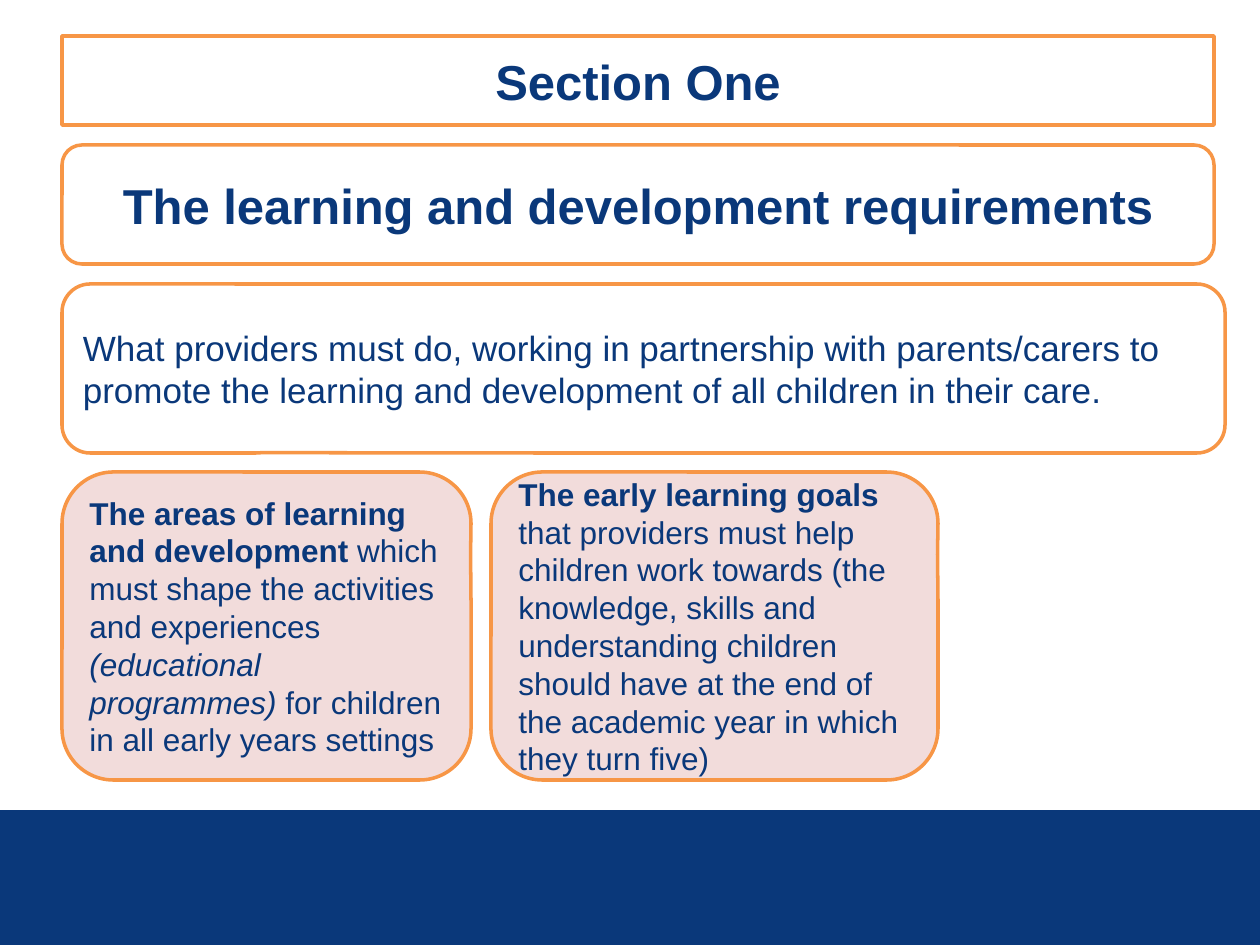
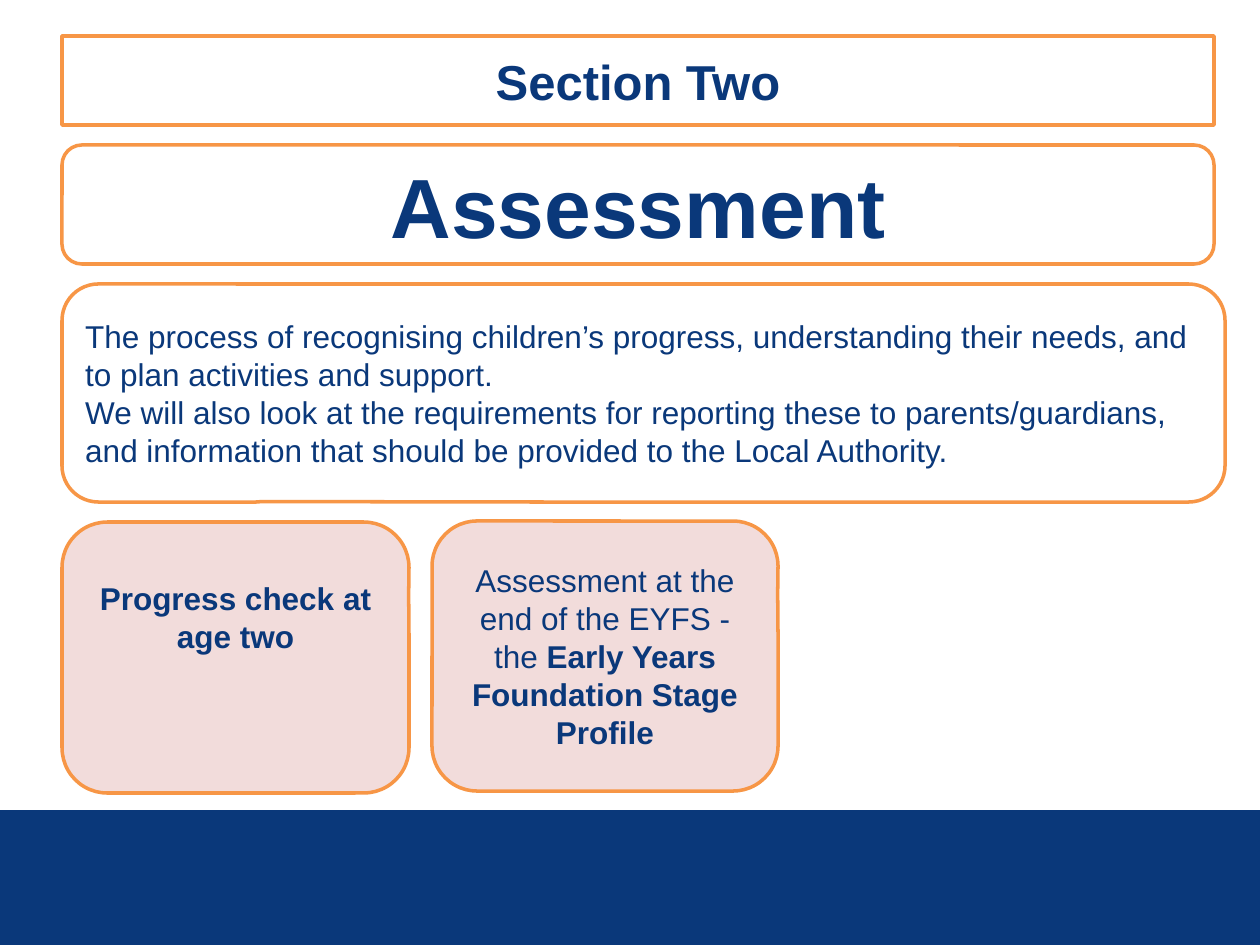
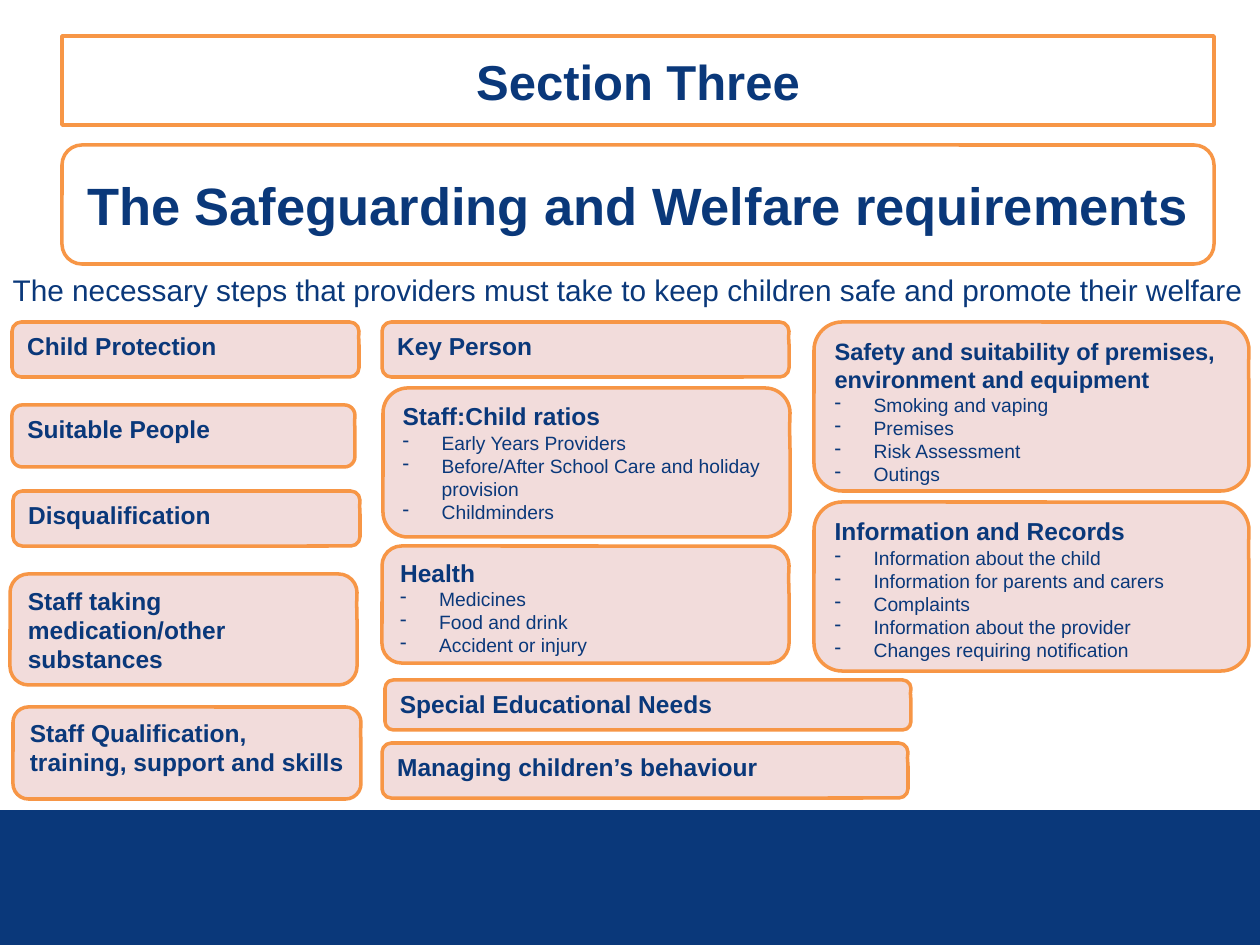
from dataclasses import dataclass

from lxml import etree
from pptx import Presentation
from pptx import util as u
from pptx.dml.color import RGBColor
from pptx.enum import shapes, text
from pptx.oxml import ns

PX = 914400 / 126
SLIDE_W, SLIDE_H = 1260, 945
LEFT, BANNER_W = 62, 1152
SUMMARY_TOP, SUMMARY_W = 284, 1163
CENTER, START = text.PP_ALIGN.CENTER, text.PP_ALIGN.LEFT
MIDDLE, TOP = text.MSO_ANCHOR.MIDDLE, text.MSO_ANCHOR.TOP
CALLOUT = shapes.MSO_SHAPE.ROUNDED_RECTANGULAR_CALLOUT
SIDE_TIP = (0.499, -0.232, 0.167)
BASE_TIP = (-0.328, 0.498, 0.167)


@dataclass(frozen=True)
class Theme:
    font: str = "Arial"
    navy: RGBColor = RGBColor(0x0A, 0x38, 0x7A)
    orange: RGBColor = RGBColor(0xF7, 0x96, 0x46)
    pink: RGBColor = RGBColor(0xF2, 0xDC, 0xDB)
    white: RGBColor = RGBColor(0xFF, 0xFF, 0xFF)
    line: float = 2
    title: float = 28
    summary: float = 20
    body: float = 18
    lead: float = 17
    topic: float = 14
    item: float = 11


THEME = Theme()


def px(n):
    return u.Emu(round(n * PX))


def place(sp, box):
    sp.left, sp.top, sp.width, sp.height = map(px, box)


def paint(sp, fill):
    sp.fill.solid()
    sp.fill.fore_color.rgb = fill
    sp.line.color.rgb = THEME.orange
    sp.line.width = u.Pt(THEME.line)


def set_geometry(sp, preset, adjustments=()):
    """Give a placed placeholder a preset outline."""
    geom = etree.Element(ns.qn("a:prstGeom"), prst=preset)
    guides = etree.SubElement(geom, ns.qn("a:avLst"))
    for i, value in enumerate(adjustments, 1):
        etree.SubElement(guides, ns.qn("a:gd"), name=f"adj{i}",
                         fmla=f"val {round(value * 100000)}")
    sp.element.spPr.insert(1, geom)


def set_bullet(p, mark):
    pPr = p._p.get_or_add_pPr()
    indent = px(39) if mark else 0
    pPr.set("marL", str(indent))
    pPr.set("indent", str(-indent))
    if mark:
        etree.SubElement(pPr, ns.qn("a:buChar"), char=mark)
    else:
        etree.SubElement(pPr, ns.qn("a:buNone"))


def add_paragraph(tf, runs, size, align=START, mark=None):
    """Fill the empty first paragraph or add one; runs are (text, style) with style b or i."""
    p = tf.paragraphs[0] if not tf.text else tf.add_paragraph()
    p.alignment = align
    p.space_before = u.Pt(0)
    set_bullet(p, mark)
    for words, style in runs:
        r = p.add_run()
        r.text = words
        r.font.name, r.font.size = THEME.font, u.Pt(size)
        r.font.bold, r.font.italic = style == "b", style == "i"
        r.font.color.rgb = THEME.navy


def prepare_text(sp, anchor):
    tf = sp.text_frame
    tf.word_wrap = True
    tf.auto_size = text.MSO_AUTO_SIZE.NONE
    tf.vertical_anchor = anchor
    return tf


def add_box(s, kind, box, fill):
    sp = s.shapes.add_shape(kind, *map(px, box))
    sp.shadow.inherit = False
    paint(sp, fill)
    return sp


def add_band(prs, s):
    """Draw the bottom band and move it to the slide master."""
    band = s.shapes.add_shape(shapes.MSO_SHAPE.RECTANGLE,
                              *map(px, (0, 810, SLIDE_W, SLIDE_H - 810)))
    band.shadow.inherit = False
    band.fill.solid()
    band.fill.fore_color.rgb = THEME.navy
    band.line.fill.background()
    band.element.nvSpPr.cNvPr.set("id", "100")
    prs.slide_master.shapes.element.insert(2, band.element)


def add_section(prs, section, heading, heading_size=THEME.title):
    s = prs.slides.add_slide(prs.slide_layouts[1])
    title = s.shapes.title
    place(title, (LEFT, 36, BANNER_W, 89))
    set_geometry(title, "roundRect")
    paint(title, THEME.white)
    banner = add_box(s, shapes.MSO_SHAPE.ROUNDED_RECTANGLE,
                     (LEFT, 145, BANNER_W, 119), THEME.white)
    for sp, words, size in ((title, section, THEME.title),
                            (banner, heading, heading_size)):
        add_paragraph(prepare_text(sp, MIDDLE), [(words, "b")], size, CENTER)
    return s


def add_body(s, box, paragraphs, size, anchor):
    body = s.placeholders[1]
    place(body, box)
    tf = prepare_text(body, anchor)
    for words in paragraphs:
        add_paragraph(tf, [(words, "")], size)
    return body


def add_summary(s, height, paragraphs, size):
    body = add_body(s, (LEFT, SUMMARY_TOP, SUMMARY_W, height),
                    paragraphs, size, MIDDLE)
    set_geometry(body, "wedgeRoundRectCallout", BASE_TIP)
    paint(body, THEME.white)


def add_card(s, box, runs, size=THEME.body, align=START, anchor=MIDDLE):
    card = add_box(s, CALLOUT, box, THEME.pink)
    for i, value in enumerate(SIDE_TIP):
        card.adjustments[i] = value
    tf = prepare_text(card, anchor)
    add_paragraph(tf, runs, size, align)
    return tf


def add_topic(s, box, name, items=(), size=THEME.topic):
    tf = add_card(s, box, [(name, "b")], size, anchor=TOP)
    for item in items:
        add_paragraph(tf, [(item, "")], THEME.item, mark="-")


def learning_slide(prs):
    s = add_section(prs, "Section One", "The learning and development requirements")
    add_band(prs, s)
    add_summary(s, 169, [
        "What providers must do, working in partnership with parents/carers to "
        "promote the learning and development of all children in their care."],
        THEME.summary)
    add_card(s, (LEFT, 472, 409, 308), [
        ("The areas of learning and development ", "b"),
        ("which must shape the activities and experiences ", ""),
        ("(educational programmes) ", "i"),
        ("for children in all early years settings", "")])
    add_card(s, (491, 472, 447, 308), [
        ("The early learning goals ", "b"),
        ("that providers must help children work towards (the knowledge, skills and "
         "understanding children should have at the end of the academic year in which "
         "they turn five)", "")])


def assessment_slide(prs):
    s = add_section(prs, "Section Two", "Assessment", 48)
    add_summary(s, 218, [
        "The process of recognising children’s progress, understanding their needs, "
        "and to plan activities and support.",
        "We will also look at the requirements for reporting these to "
        "parents/guardians, and information that should be provided to the Local "
        "Authority."], THEME.body)
    progress = add_card(s, (LEFT, 522, 347, 271),
                        [("Progress check at age two", "b")],
                        align=CENTER, anchor=TOP)
    progress.margin_top = px(44)
    add_card(s, (432, 521, 346, 270), [
        ("Assessment at the end of the EYFS - the ", ""),
        ("Early Years Foundation Stage Profile", "b")], align=CENTER)


def safeguarding_slide(prs):
    s = add_section(prs, "Section Three", "The Safeguarding and Welfare requirements", 30)
    add_body(s, (0, 265, SLIDE_W, 87), [
        "The necessary steps that providers must take to keep children safe and "
        "promote their welfare"], THEME.lead, TOP)

    add_topic(s, (12, 322, 347, 55), "Child Protection")
    add_topic(s, (12, 405, 343, 62), "Suitable People")
    add_topic(s, (13, 491, 347, 55), "Disqualification")
    add_topic(s, (10, 574, 347, 111), "Staff taking medication/other substances")
    add_topic(s, (13, 707, 348, 92), "Staff Qualification, training, support and skills")

    add_topic(s, (382, 322, 407, 55), "Key Person")
    add_topic(s, (383, 388, 407, 149), "Staff:Child ratios", [
        "Early Years Providers",
        "Before/After School Care and holiday provision",
        "Childminders"])
    add_topic(s, (382, 546, 407, 117), "Health", [
        "Medicines", "Food and drink", "Accident or injury"])
    add_topic(s, (385, 680, 526, 50), "Special Educational Needs")
    add_topic(s, (382, 743, 526, 55), "Managing children’s behaviour")

    add_topic(s, (814, 322, 435, 169),
              "Safety and suitability of premises, environment and equipment",
              ["Smoking and vaping", "Premises", "Risk Assessment", "Outings"],
              size=13.5)
    add_topic(s, (814, 502, 435, 169), "Information and Records", [
        "Information about the child",
        "Information for parents and carers",
        "Complaints",
        "Information about the provider",
        "Changes requiring notification"])


def main():
    prs = Presentation()
    prs.slide_width, prs.slide_height = px(SLIDE_W), px(SLIDE_H)
    learning_slide(prs)
    assessment_slide(prs)
    safeguarding_slide(prs)
    prs.save("out.pptx")


if __name__ == "__main__":
    main()
